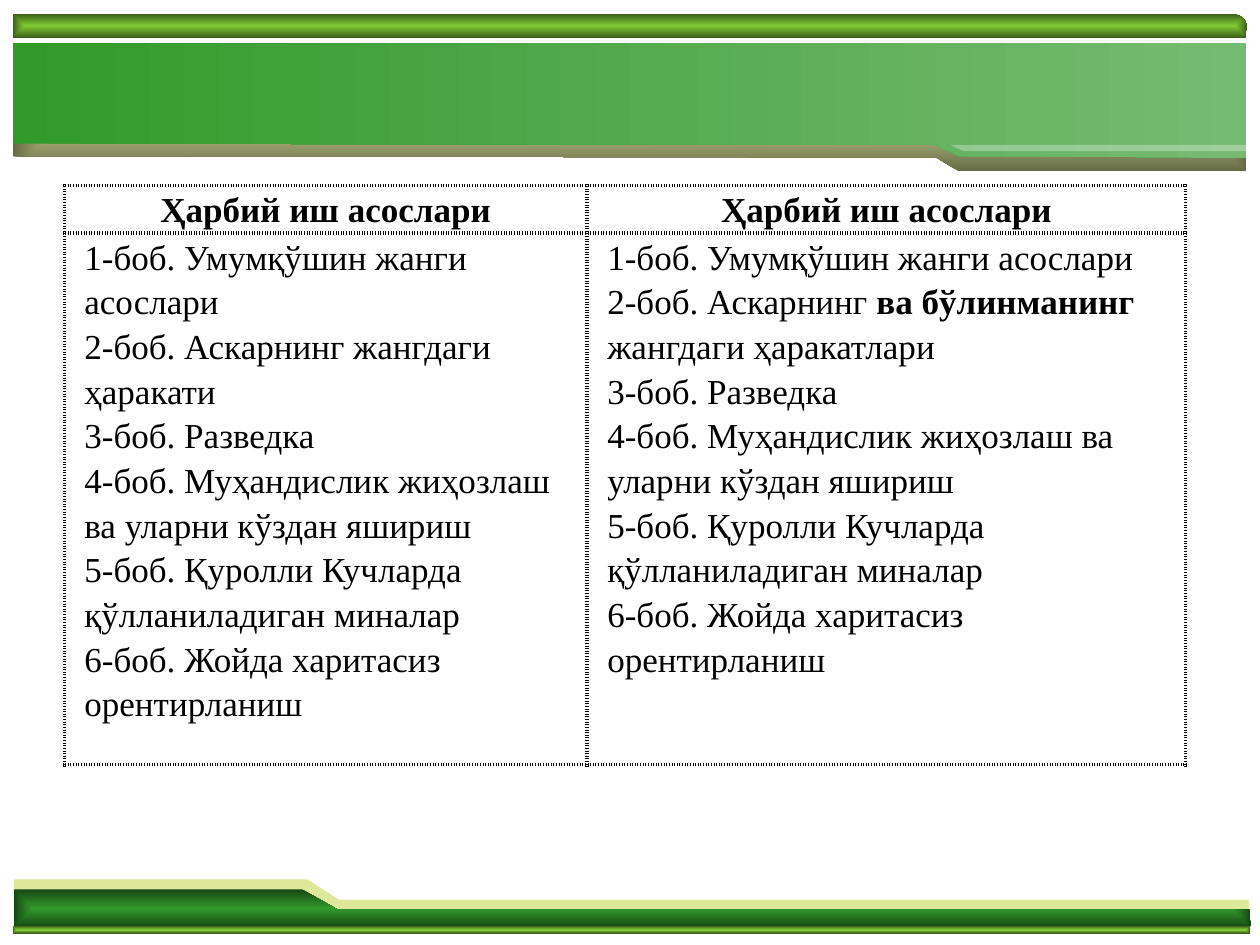
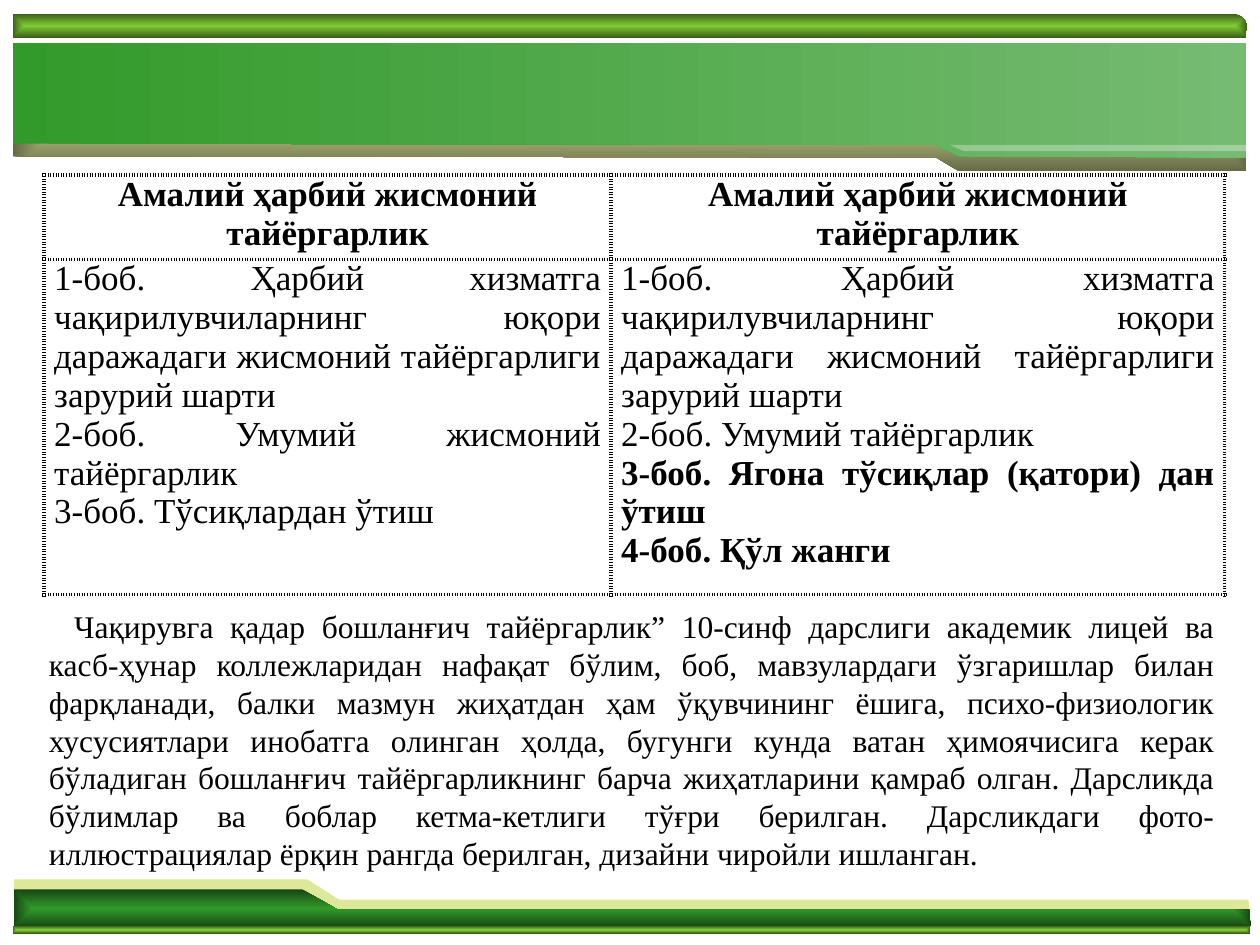
from lxml import etree
from pptx import Presentation
from pptx.dml.color import RGBColor
from pptx.enum.shapes import MSO_SHAPE
from pptx.enum.text import PP_ALIGN
from pptx.oxml import parse_xml
from pptx.oxml.ns import nsdecls, qn
from pptx.util import Inches, Pt

CENTER, JUSTIFY, LEFT = PP_ALIGN.CENTER, PP_ALIGN.JUSTIFY, PP_ALIGN.LEFT
RECTANGLE = MSO_SHAPE.RECTANGLE

BLACK = RGBColor(0x00, 0x00, 0x00)
WHITE = RGBColor(0xFF, 0xFF, 0xFF)
CREAM = RGBColor(0xDD, 0xE8, 0x9A)
OLIVE = RGBColor(0x66, 0x6B, 0x47)
GREEN = RGBColor(0x32, 0x9A, 0x2A)
DARK_GREEN = RGBColor(0x17, 0x47, 0x13)
PALE_GREEN = RGBColor(0x76, 0xBB, 0x72)
LIME = RGBColor(0x80, 0xCB, 0x35)
DARK_LIME = RGBColor(0x3B, 0x5E, 0x18)

W, H = 10, 7.5
L, R = 0.1, 9.89          # edges of the bands
BAND_TOP = 0.34
FONT = "Times New Roman"

# Outline points, colours (one is solid, two a gradient), gradient from the centre
BANDS = [
    ([(0.11, 7.32), (9.92, 7.32), (9.91, 7.14), (2.69, 7.14), (2.44, 6.98), (0.11, 6.98)],
     [CREAM], False),
    ([(0.11, 7.36), (9.93, 7.35), (9.92, 7.22), (2.68, 7.22), (2.4, 7.06), (0.11, 7.06)],
     [GREEN, DARK_GREEN], True),
    ([(L, 0.11), (9.8, 0.11), (9.85, 0.13), (9.88, 0.16), (9.9, 0.19), (R, 0.3), (L, 0.3)],
     [LIME, DARK_LIME], True),
    ([(R, BAND_TOP), (L, BAND_TOP), (L, 1.24), (7.43, 1.25), (7.61, 1.36), (R, 1.36)],
     [CREAM, OLIVE], True),
    ([(R, BAND_TOP), (L, BAND_TOP), (L, 1.14), (7.43, 1.15), (7.61, 1.24), (R, 1.25)],
     [GREEN, PALE_GREEN], False),
    ([(L, 7.35), (9.92, 7.35), (9.92, 7.41), (L, 7.41)], [LIME, DARK_LIME], True),
    ([(7.54, 1.15), (9.9, 1.15), (9.9, 1.2), (7.65, 1.2)], [WHITE], False),
]

BASICS = "Ҳарбий иш асослари"
FITNESS = "Амалий ҳарбий жисмоний тайёргарлик"
COMBAT = "1-боб. Умумқўшин жанги асослари"
CONSCRIPTS = ("1-боб. Ҳарбий хизматга чақирилувчиларнинг юқори даражадаги "
              "жисмоний тайёргарлиги зарурий шарти")
LATER_CHAPTERS = [
    "3-боб. Разведка",
    "4-боб. Муҳандислик жиҳозлаш ва уларни кўздан яшириш",
    "5-боб. Қуролли Кучларда қўлланиладиган миналар",
    "6-боб. Жойда харитасиз орентирланиш",
]

# Text between asterisks is bold
SLIDES = [
    dict(left=0.51, top=1.47, cols=[4.15, 4.75], rows=[0.38, 4.22],
         inset=0.06, indent=0.1, spacing=1.15, align=LEFT,
         cells=[[[f"*{BASICS}*"]] * 2,
                [[COMBAT, "2-боб. Аскарнинг жангдаги ҳаракати", *LATER_CHAPTERS],
                 [COMBAT, "2-боб. Аскарнинг *ва бўлинманинг *жангдаги ҳаракатлари",
                  *LATER_CHAPTERS]]],
         note=None),
    dict(left=0.35, top=1.39, cols=[4.5, 4.87], rows=[0.67, 2.66],
         inset=0.08, indent=0, spacing=1.0, align=JUSTIFY,
         cells=[[[f"*{FITNESS}*"]] * 2,
                [[CONSCRIPTS, "2-боб. Умумий жисмоний тайёргарлик",
                  "3-боб. Тўсиқлардан ўтиш"],
                 [CONSCRIPTS, "2-боб. Умумий тайёргарлик",
                  "*3-боб. Ягона тўсиқлар (қатори) дан ўтиш*", "*4-боб. Қўл жанги*"]]],
         note="Чақирувга қадар бошланғич тайёргарлик” 10-синф дарслиги академик лицей ва "
              "касб-ҳунар коллежларидан нафақат бўлим, боб, мавзулардаги ўзгаришлар билан "
              "фарқланади, балки мазмун жиҳатдан ҳам ўқувчининг ёшига, психо-физиологик "
              "хусусиятлари инобатга олинган ҳолда, бугунги кунда ватан ҳимоячисига керак "
              "бўладиган бошланғич тайёргарликнинг барча жиҳатларини қамраб олган. Дарсликда "
              "бўлимлар ва боблар кетма-кетлиги тўғри берилган. Дарсликдаги "
              "фото-иллюстрациялар ёрқин рангда берилган, дизайни чиройли ишланган."),
]


def write(tf, lines, size, align, spacing, margin=0, first=0):
    """Fill a text frame; margin and first-line indent are in inches."""
    for i, line in enumerate(lines):
        p = tf.paragraphs[0] if i == 0 else tf.add_paragraph()
        for name, value in dict(alignment=align, line_spacing=spacing).items():
            setattr(p, name, value)
        pPr = p._p.get_or_add_pPr()
        pPr.set("marL", str(Inches(margin)))
        pPr.set("indent", str(Inches(first)))
        for k, part in enumerate(line.split("*")):
            if part:
                r = p.add_run()
                r.text = part
                for name, value in dict(name=FONT, size=Pt(size), bold=k % 2 == 1).items():
                    setattr(r.font, name, value)
                r.font.color.rgb = BLACK


def draw_bands(s):
    for points, colors, from_center in BANDS:
        start, *rest = [(Inches(x), Inches(y)) for x, y in points]
        if len(points) == 4 and from_center:
            right, bottom = (Inches(v) for v in points[2])
            sp = s.shapes.add_shape(RECTANGLE, *start, right - start[0], bottom - start[1])
        else:
            fb = s.shapes.build_freeform(*start)
            fb.add_line_segments(rest, close=True)
            sp = fb.convert_to_shape()
        sp.shadow.inherit = False
        sp.line.fill.background()
        if len(colors) == 1:
            sp.fill.solid()
            sp.fill.fore_color.rgb = colors[0]
            if colors[0] == WHITE:
                clr = sp._element.spPr.find(".//" + qn("a:srgbClr"))
                etree.SubElement(clr, qn("a:alpha"), val="30000")
            continue
        sp.fill.gradient()
        sp.fill.gradient_angle = 0
        for stop, color, position in zip(sp.fill.gradient_stops, colors, (0, 1)):
            stop.color.rgb = color
            stop.position = position
        if from_center:
            lin = sp._element.spPr.find(".//" + qn("a:lin"))
            lin.getparent().replace(lin, parse_xml(
                f'<a:path {nsdecls("a")} path="rect">'
                '<a:fillToRect l="50000" t="50000" r="50000" b="50000"/></a:path>'))


prs = Presentation()
prs.slide_width, prs.slide_height = Inches(W), Inches(H)

for page in SLIDES:
    s = prs.slides.add_slide(prs.slide_layouts[6])
    draw_bands(s)

    cols, rows = page["cols"], page["rows"]
    box = page["left"], page["top"], sum(cols), sum(rows)
    table = s.shapes.add_table(len(rows), len(cols), *map(Inches, box)).table
    table.first_row = table.horz_banding = False
    for column, width in zip(table.columns, cols):
        column.width = Inches(width)
    for row, height in zip(table.rows, rows):
        row.height = Inches(height)

    for i, row in enumerate(page["cells"]):
        for j, lines in enumerate(row):
            cell = table.cell(i, j)
            cell.margin_left = cell.margin_right = Inches(page["inset"])
            cell.margin_top = cell.margin_bottom = 0
            cell.fill.background()
            for k, side in enumerate("LRTB"):
                cell._tc.get_or_add_tcPr().insert(k, parse_xml(
                    f'<a:ln{side} {nsdecls("a")} w="{Pt(2.25)}"><a:solidFill>'
                    f'<a:srgbClr val="{BLACK}"/></a:solidFill>'
                    f'<a:prstDash val="sysDot"/></a:ln{side}>'))
            write(cell.text_frame, lines, 20, page["align"] if i else CENTER,
                  page["spacing"], page["indent"] if i else 0)

    if page["note"]:
        tf = s.shapes.add_textbox(*map(Inches, (0.29, 4.77, 9.45, 2.22))).text_frame
        tf.word_wrap = True
        write(tf, [page["note"]], 18, JUSTIFY, 1.0, first=0.2)

prs.save("out.pptx")
